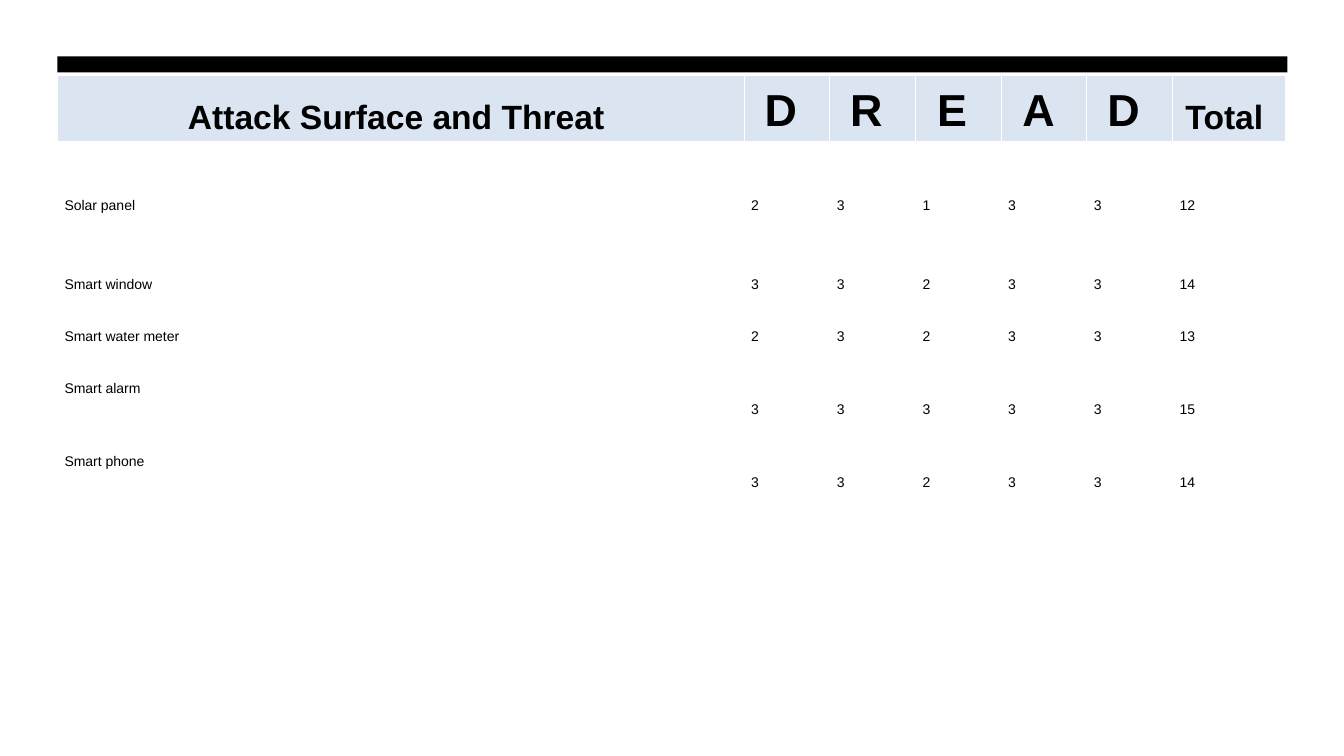
from dataclasses import dataclass

from lxml.etree import SubElement
from pptx import Presentation
from pptx.dml.color import RGBColor
from pptx.enum.shapes import MSO_SHAPE as Shape
from pptx.enum.text import MSO_ANCHOR as Anchor, PP_ALIGN as Align
from pptx.oxml.ns import qn
from pptx.slide import Slide
from pptx.table import _Cell as Cell
from pptx.util import Inches, Pt


@dataclass(frozen=True)
class Theme:
    font: str = "Arial"
    ink: str = "000000"
    header_fill: str = "DBE5F1"
    border: str = "FFFFFF"
    border_width: float = 0.75
    title_size: int = 24
    letter_size: int = 32
    body_size: int = 10


@dataclass(frozen=True)
class TextStyle:
    size: int
    bold: bool
    align: Align
    line: float
    gap: float


@dataclass(frozen=True)
class Threat:
    name: str
    scores: tuple[int, ...]
    height: float
    name_bottom: float = 0.05


THEME = Theme()
BODY = TextStyle(THEME.body_size, False, Align.LEFT, 12, 3)
TITLE = TextStyle(THEME.title_size, True, Align.CENTER, 13.8, 6)
LETTER = TextStyle(THEME.letter_size, True, Align.CENTER, 13.8, 6)

LEFT, WIDTH = 0.57, 12.2
BAR_TOP, BAR_HEIGHT = 0.56, 0.16
TABLE_TOP, HEADER_HEIGHT = 0.75, 0.65
COLUMNS = [6.81] + [0.85] * 5 + [1.12]
HEADINGS = ["Attack Surface and Threat", *"DREAD", "Total"]
NO_BREAK_SPACE = " "  # closes the text of every cell

THREATS = [
    Threat("Solar panel", (2, 3, 1, 3, 3), 0.77),
    Threat("Smart window", (3, 3, 2, 3, 3), 0.78),
    Threat("Smart water meter", (2, 3, 2, 3, 3), 0.52),
    Threat("Smart alarm", (3, 3, 3, 3, 3), 0.72, 0.26),
    Threat("Smart phone", (3, 3, 2, 3, 3), 0.73, 0.26),
]


def add_borders(cell: Cell) -> None:
    """Draw the four cell edges; they must precede the fill."""
    properties = cell._tc.get_or_add_tcPr()
    for index, edge in enumerate(("a:lnL", "a:lnR", "a:lnT", "a:lnB")):
        line = SubElement(properties, qn(edge), w=str(Pt(THEME.border_width)))
        fill = SubElement(line, qn("a:solidFill"))
        SubElement(fill, qn("a:srgbClr"), val=THEME.border)
        properties.insert(index, line)


def write_cell(cell: Cell, text: str, style: TextStyle, bottom: float = 0.05) -> None:
    cell.vertical_anchor = Anchor.BOTTOM
    cell.margin_left = cell.margin_right = Inches(0.07)
    cell.margin_top, cell.margin_bottom = Inches(0.05), Inches(bottom)
    add_borders(cell)
    para = cell.text_frame.paragraphs[0]
    para.alignment = style.align
    para.line_spacing = Pt(style.line)
    para.space_before = para.space_after = Pt(style.gap)
    span = para.add_run()
    span.text = text + NO_BREAK_SPACE
    span.font.name = THEME.font
    span.font.size = Pt(style.size)
    span.font.bold = style.bold
    span.font.color.rgb = RGBColor.from_string(THEME.ink)


def add_bar(page: Slide) -> None:
    bar = page.shapes.add_shape(Shape.RECTANGLE, Inches(LEFT), Inches(BAR_TOP),
                                Inches(WIDTH), Inches(BAR_HEIGHT))
    bar.shadow.inherit = False
    bar.fill.solid()
    bar.fill.fore_color.rgb = RGBColor.from_string(THEME.ink)
    bar.line.fill.background()


def add_threat_table(page: Slide) -> None:
    heights = [HEADER_HEIGHT] + [threat.height for threat in THREATS]
    table = page.shapes.add_table(
        len(heights), len(COLUMNS), Inches(LEFT), Inches(TABLE_TOP),
        Inches(WIDTH), Inches(sum(heights))).table
    table.first_row = table.horz_banding = False
    for column, width in zip(table.columns, COLUMNS):
        column.width = Inches(width)
    for row, height in zip(table.rows, heights):
        row.height = Inches(height)

    # Header row
    for index, heading in enumerate(HEADINGS):
        cell = table.cell(0, index)
        write_cell(cell, heading, LETTER if len(heading) == 1 else TITLE)
        cell.fill.solid()
        cell.fill.fore_color.rgb = RGBColor.from_string(THEME.header_fill)

    # Threat rows, each closed by the sum of its scores
    for row_index, threat in enumerate(THREATS, start=1):
        values = [threat.name, *threat.scores, sum(threat.scores)]
        for index, value in enumerate(values):
            cell = table.cell(row_index, index)
            bottom = threat.name_bottom if index == 0 else 0.05
            write_cell(cell, str(value), BODY, bottom)
            cell.fill.background()


def main() -> None:
    deck = Presentation()
    deck.slide_width, deck.slide_height = Inches(13.33), Inches(7.5)
    page = deck.slides.add_slide(deck.slide_layouts[6])
    add_bar(page)
    add_threat_table(page)
    deck.save("out.pptx")


if __name__ == "__main__":
    main()
